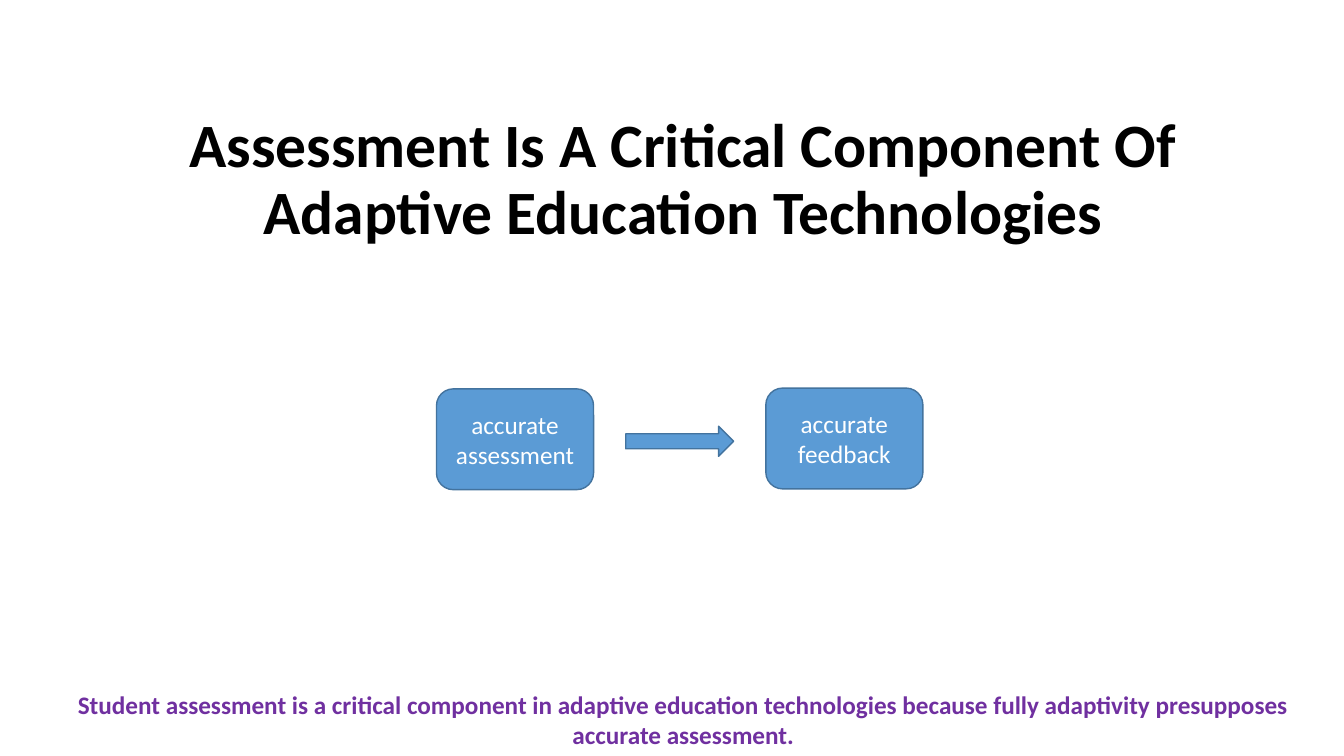
from dataclasses import dataclass

from pptx import Presentation
from pptx.dml.color import RGBColor
from pptx.enum.shapes import MSO_SHAPE
from pptx.enum.text import MSO_ANCHOR, PP_ALIGN
from pptx.util import Cm, Pt

ROUNDED = MSO_SHAPE.ROUNDED_RECTANGLE
ARROW = MSO_SHAPE.RIGHT_ARROW
TOP = MSO_ANCHOR.TOP
MIDDLE = MSO_ANCHOR.MIDDLE
CENTER = PP_ALIGN.CENTER


@dataclass(frozen=True)
class Theme:
    font: str = "Calibri"
    title_size: Pt = Pt(44)
    body_size: Pt = Pt(18)
    outline_width: Pt = Pt(1)
    black: RGBColor = RGBColor(0x00, 0x00, 0x00)
    white: RGBColor = RGBColor(0xFF, 0xFF, 0xFF)
    blue: RGBColor = RGBColor(0x5B, 0x9B, 0xD5)
    outline: RGBColor = RGBColor(0x43, 0x73, 0x9E)
    purple: RGBColor = RGBColor(0x70, 0x30, 0xA0)


THEME = Theme()


def write(frame, lines, size, color, bold=False, anchor=MIDDLE, spacing=1.0):
    """Fill a text frame with centred paragraphs, one per line."""
    frame.word_wrap = True
    frame.vertical_anchor = anchor
    for index, line in enumerate(lines):
        para = frame.paragraphs[0] if index == 0 else frame.add_paragraph()
        para.text = line
        para.alignment = CENTER
        para.line_spacing = spacing
        para.font.name = THEME.font
        para.font.size = size
        para.font.bold = bold
        para.font.color.rgb = color


def add_text(page, left, top, width, height, text, size, color, **style):
    box = page.shapes.add_textbox(Cm(left), Cm(top), Cm(width), Cm(height))
    write(box.text_frame, [text], size, color, bold=True, **style)


def add_blue_shape(page, kind, left, top, width, height):
    shape = page.shapes.add_shape(kind, Cm(left), Cm(top), Cm(width), Cm(height))
    shape.shadow.inherit = False
    shape.fill.solid()
    shape.fill.fore_color.rgb = THEME.blue
    shape.line.color.rgb = THEME.outline
    shape.line.width = THEME.outline_width
    return shape


def add_step(page, left, top, lines):
    step = add_blue_shape(page, ROUNDED, left, top, 3.96, 2.54)
    write(step.text_frame, lines, THEME.body_size, THEME.white)


def main():
    deck = Presentation()
    deck.slide_width, deck.slide_height = Cm(33.87), Cm(19.05)
    page = deck.slides.add_slide(deck.slide_layouts[6])

    # Title
    add_text(page, 2.62, 2.72, 29.21, 3.68,
             "Assessment Is A Critical Component Of Adaptive Education Technologies",
             THEME.title_size, THEME.black, spacing=0.9)

    # Flow from assessment to feedback
    add_step(page, 11, 9.8, ["accurate", "assessment"])
    add_blue_shape(page, ARROW, 15.77, 10.74, 2.72, 0.76)
    add_step(page, 19.3, 9.78, ["accurate", "feedback"])

    # Closing statement
    add_text(page, 1.14, 17.25, 32.16, 1.8,
             "Student assessment is a critical component in adaptive education "
             "technologies because fully adaptivity presupposes accurate assessment.",
             THEME.body_size, THEME.purple, anchor=TOP)

    deck.save("out.pptx")


if __name__ == "__main__":
    main()
